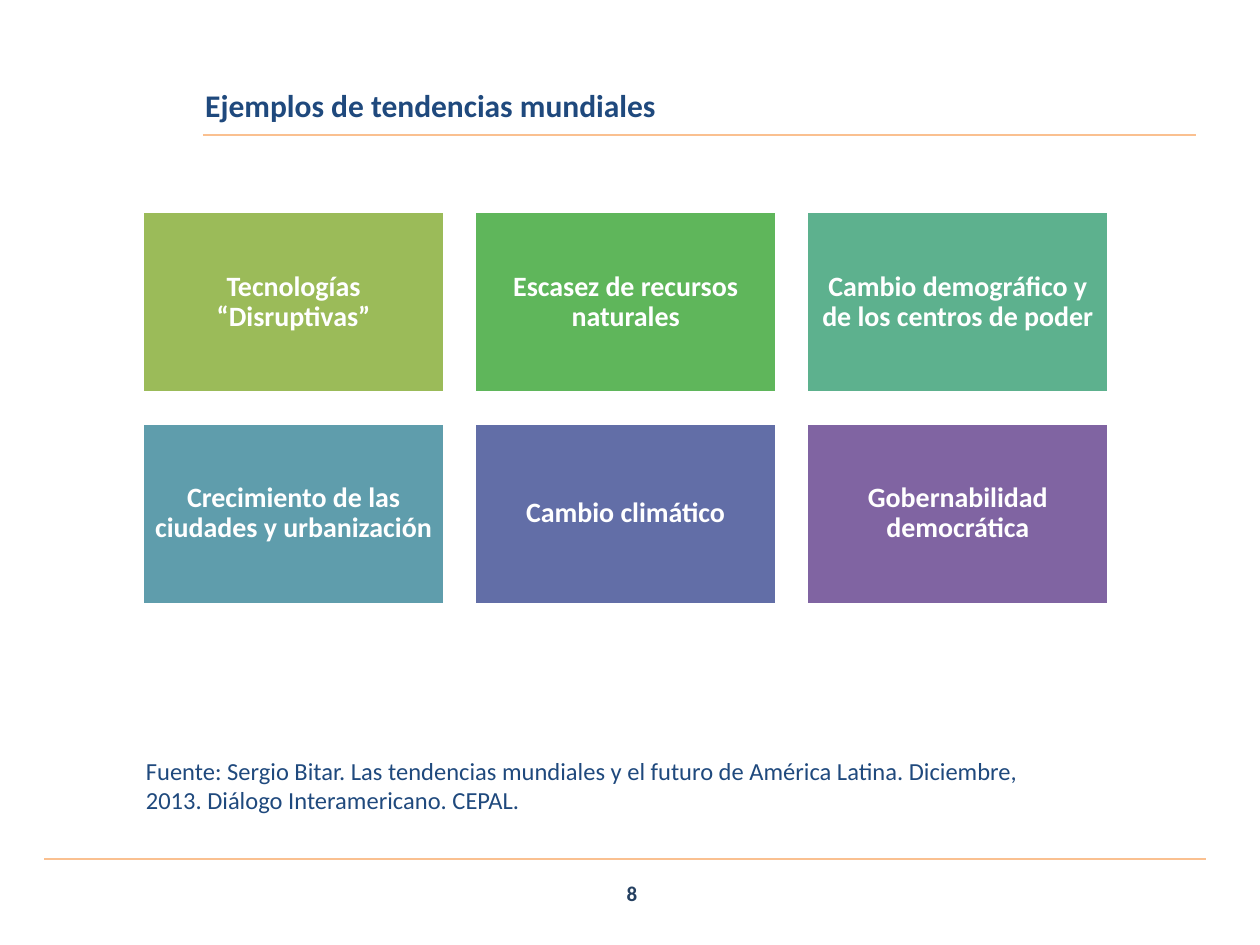
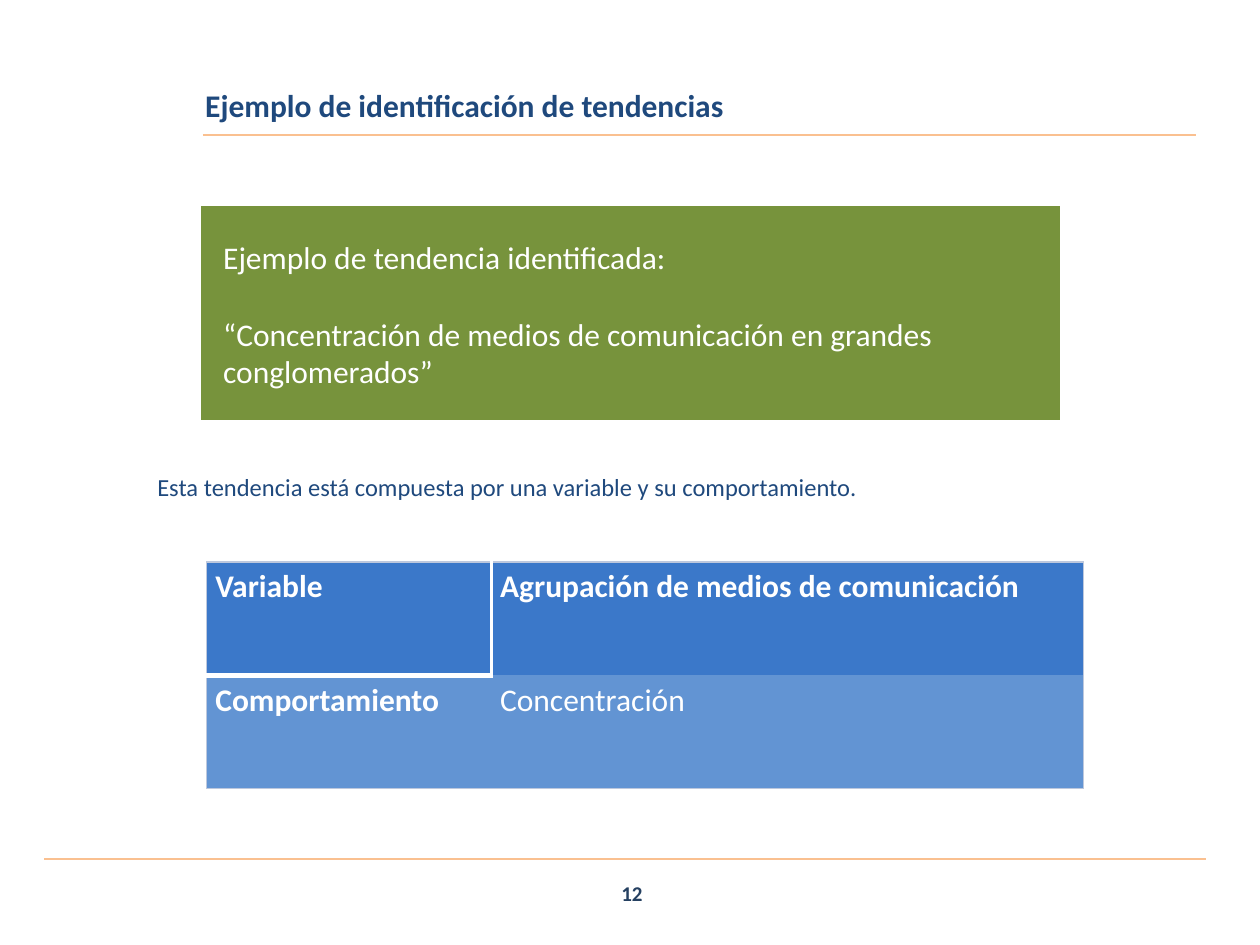
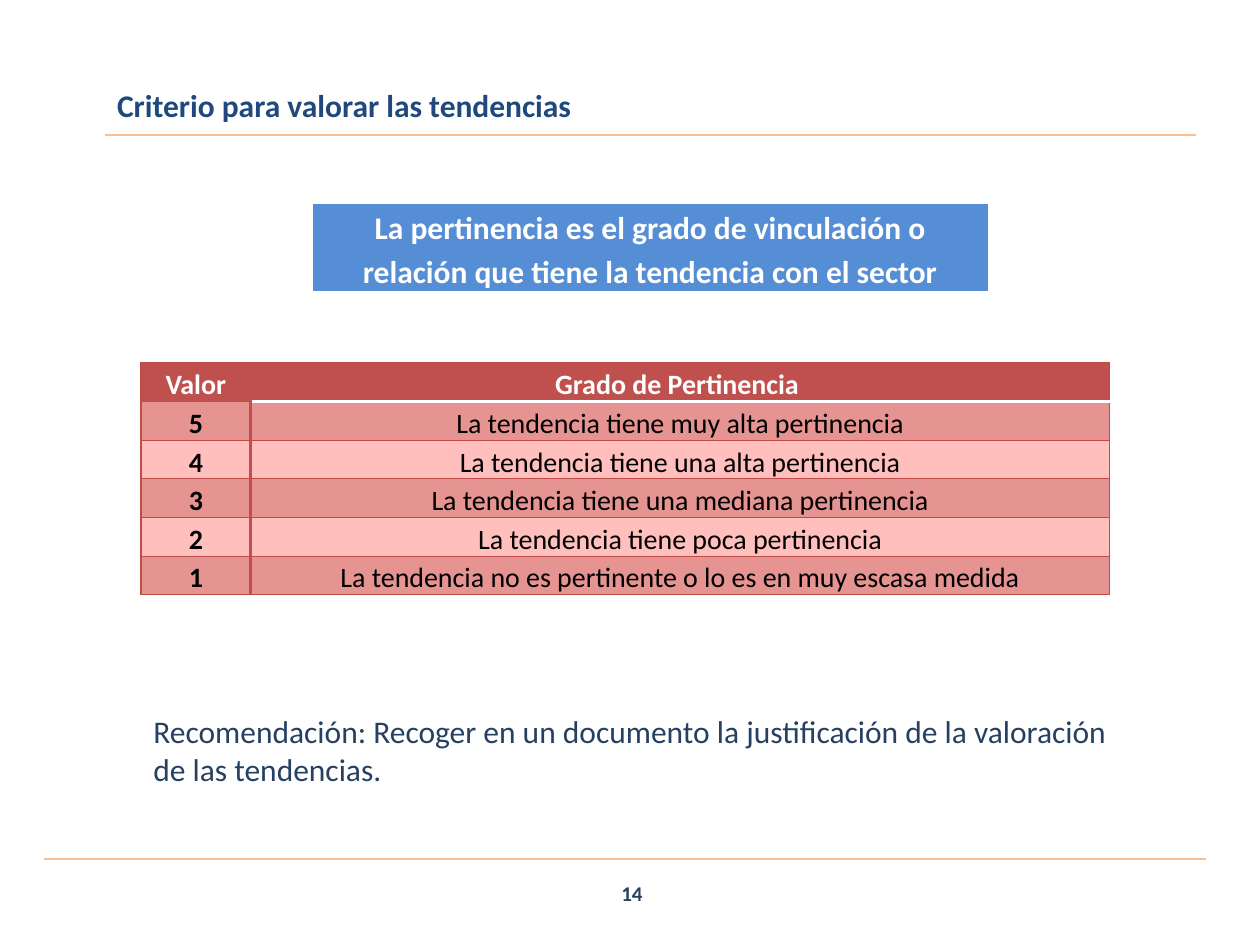
from itertools import product
from lxml.etree import SubElement
from pptx import Presentation
from pptx.dml.color import RGBColor
from pptx.enum.shapes import MSO_CONNECTOR, MSO_SHAPE
from pptx.enum.text import MSO_ANCHOR, PP_ALIGN
from pptx.oxml.ns import qn
from pptx.util import Pt

FONT = "Calibri"
NAVY = RGBColor(0x1F, 0x49, 0x7D)
DARK = RGBColor(0x25, 0x40, 0x61)
PEACH = RGBColor(0xFA, 0xC0, 0x90)
WHITE = RGBColor(0xFF, 0xFF, 0xFF)
BLACK = RGBColor(0, 0, 0)
OLIVE = RGBColor(0x77, 0x93, 0x3C)
BLUE = RGBColor(0x3B, 0x78, 0xC9)
SOFT = RGBColor(0x62, 0x94, 0xD3)
SKY = RGBColor(0x55, 0x8E, 0xD5)
PALE = RGBColor(0xBD, 0xC8, 0xDD)
RED = RGBColor(0xC0, 0x50, 0x4D)
BRICK = RGBColor(0xBF, 0x4C, 0x48)
ROSE = RGBColor(0xE5, 0x94, 0x91)
PINK = RGBColor(0xFF, 0xBF, 0xBD)
PLAIN = "{2D5ABB26-0587-4C30-8999-92F81FD0307C}"

TRENDS = [
    ("Tecnologías “Disruptivas”", RGBColor(0x9B, 0xBB, 0x59)),
    ("Escasez de recursos naturales", RGBColor(0x5F, 0xB6, 0x5B)),
    ("Cambio demográfico y de los centros de poder", RGBColor(0x5D, 0xB1, 0x8E)),
    ("Crecimiento de las ciudades y urbanización", RGBColor(0x5F, 0x9D, 0xAC)),
    ("Cambio climático", RGBColor(0x62, 0x6E, 0xA7)),
    ("Gobernabilidad democrática", RGBColor(0x80, 0x64, 0xA2)),
]
SOURCE = ("Fuente: Sergio Bitar. Las tendencias mundiales y el futuro de América Latina. "
          "Diciembre, 2013. Diálogo Interamericano. CEPAL.")
SAMPLE = ["Ejemplo de tendencia identificada:",
          "“Concentración de medios de comunicación en grandes conglomerados”"]
PARTS = "Esta tendencia está compuesta por una variable y su comportamiento."
PAIRS = [("Variable", "Agrupación de medios de comunicación"),
         ("Comportamiento", "Concentración")]
CLAIM = "La pertinencia es el grado de vinculación o relación que tiene la tendencia con el sector"
GRADES = [
    ("Valor", "Grado de Pertinencia "),
    ("5", "La tendencia tiene muy alta pertinencia"),
    ("4", "La tendencia tiene una alta pertinencia"),
    ("3", "La tendencia tiene una mediana pertinencia"),
    ("2", "La tendencia tiene poca pertinencia"),
    ("1", "La tendencia no es pertinente o lo es en muy escasa medida"),
]
ADVICE = ("Recomendación: Recoger en un documento la justificación de la valoración "
          "de las tendencias.")

TITLE_BOX = (110.2, 43.2, 584, 33.8)
WIDE_BOX = (59.8, 49, 476, 21.6)


def write(frame, lines, size, color, bold=False, align=PP_ALIGN.LEFT,
          space=None, before=0, after=0, gap=0):
    for i, line in enumerate(lines):
        para = frame.add_paragraph() if i else frame.paragraphs[0]
        para.alignment = align
        para.space_before = Pt(gap if i else before)
        para.space_after = Pt(after)
        if space:
            para.line_spacing = space
        run = para.add_run()
        run.text = line
        font = run.font
        font.name, font.size, font.bold = FONT, Pt(size), bold
        font.color.rgb = color


def inset(part, left, top, right, low):
    part.margin_left, part.margin_top = Pt(left), Pt(top)
    part.margin_right, part.margin_bottom = Pt(right), Pt(low)


def note(slide, box, text, size, color, anchor=MSO_ANCHOR.TOP, **style):
    frame = slide.shapes.add_textbox(*map(Pt, box)).text_frame
    frame.word_wrap = True
    frame.vertical_anchor = anchor
    write(frame, [text], size, color, **style)


def rule(slide, left, right, y):
    line = slide.shapes.add_connector(
        MSO_CONNECTOR.STRAIGHT, Pt(left), Pt(y), Pt(right), Pt(y))
    line.line.color.rgb = PEACH
    line.line.width = Pt(1.25)
    SubElement(line._element.spPr, qn("a:effectLst"))


def block(slide, box, fill):
    shape = slide.shapes.add_shape(MSO_SHAPE.RECTANGLE, *map(Pt, box))
    shape.shadow.inherit = False
    shape.fill.solid()
    shape.fill.fore_color.rgb = fill
    shape.line.color.rgb = WHITE
    shape.line.width = Pt(2)
    frame = shape.text_frame
    frame.word_wrap = True
    frame.vertical_anchor = MSO_ANCHOR.MIDDLE
    return frame


def start(deck, title, number, box, left):
    slide = deck.slides.add_slide(deck.slide_layouts[6])
    rule(slide, 25.2, 689, 491)
    rule(slide, left, 683.3, 77)
    note(slide, box, title, 18, NAVY, MSO_ANCHOR.MIDDLE, bold=True, before=3.6)
    note(slide, (277.2, 496, 167.8, 28.8), number, 12, DARK, MSO_ANCHOR.MIDDLE,
         bold=True, align=PP_ALIGN.CENTER)
    return slide


def grid(slide, left, top, widths, height, rows, pad, anchor, look):
    count = len(rows)
    table = slide.shapes.add_table(
        count, len(widths), Pt(left), Pt(top), Pt(sum(widths)), Pt(height * count)).table
    table.first_row = table.horz_banding = False
    table._tbl.tblPr.find(qn("a:tableStyleId")).text = PLAIN
    for col, width in zip(table.columns, widths):
        col.width = Pt(width)
    for r, row in enumerate(rows):
        table.rows[r].height = Pt(height)
        for c, text in enumerate(row):
            cell = table.cell(r, c)
            fill, style = look(r, c)
            cell.fill.solid()
            cell.fill.fore_color.rgb = fill
            cell.vertical_anchor = anchor
            inset(cell, pad, 0, pad, 0)
            write(cell.text_frame, [text], space=1.15, **style)
    return table


def edge(table, outer, inner):
    high, wide = len(table.rows), len(table.columns)
    pens = dict(inner)
    for (r, c, side), pen in inner.items():
        pens[(r, c + 1, "L") if side == "R" else (r + 1, c, "T")] = pen
    for r in range(high):
        pens[r, 0, "L"] = pens[r, wide - 1, "R"] = outer
    for c in range(wide):
        pens[0, c, "T"] = pens[high - 1, c, "B"] = outer
    for r, c in product(range(high), range(wide)):
        props = table.cell(r, c)._tc.get_or_add_tcPr()
        sides = [side for side in "LRTB" if (r, c, side) in pens]
        for i, side in enumerate(sides):
            color, width = pens[r, c, side]
            line = SubElement(props, qn("a:ln" + side), w=str(Pt(width)))
            fill = SubElement(line, qn("a:solidFill"))
            SubElement(fill, qn("a:srgbClr"), val=str(color))
            props.insert(i, line)


def world(deck):
    slide = start(deck, "Ejemplos de tendencias mundiales", "8", TITLE_BOX, 115.9)
    wide, high, gap = 172.8, 103.7, 17
    for i, (text, fill) in enumerate(TRENDS):
        row, col = divmod(i, 3)
        box = (81.4 + col * (wide + gap), 121 + row * (high + gap), wide, high)
        frame = block(slide, box, fill)
        inset(frame, 5, 5, 5, 5)
        write(frame, [text], 16, WHITE, True, PP_ALIGN.CENTER, 0.9)
    note(slide, (76.3, 428.4, 521.3, 41), SOURCE, 14, NAVY)


def sample(deck):
    slide = start(deck, "Ejemplo de identificación de tendencias", "12", TITLE_BOX, 115.9)
    frame = block(slide, (113.8, 116.6, 493.2, 124.6), OLIVE)
    inset(frame, 13.7, 5, 3.6, 3.6)
    write(frame, SAMPLE, 18, WHITE, gap=22)
    note(slide, (82.8, 266.4, 521.3, 24.5), PARTS, 14, NAVY)

    def look(r, c):
        return (SOFT if r else BLUE), dict(
            size=18, color=WHITE, bold=not (r and c), align=PP_ALIGN.JUSTIFY)

    table = grid(slide, 118.1, 321.1, (162.7, 338.4), 64.8, PAIRS, 5,
                 MSO_ANCHOR.TOP, look)
    edge(table, (PALE, 0.75), {(0, 0, "R"): (WHITE, 2), (0, 0, "B"): (WHITE, 3)})


def value(deck):
    slide = start(deck, "Criterio para valorar las tendencias", "14", WIDE_BOX, 59.8)

    def look(r, c):
        fill = (ROSE if r % 2 else PINK) if r else RED
        return fill, dict(size=16, color=BLACK if r else WHITE,
                          bold=not (r and c), align=PP_ALIGN.CENTER)

    def banner(r, c):
        return SKY, dict(size=18, color=WHITE, bold=True, align=PP_ALIGN.CENTER)

    table = grid(slide, 80.6, 207.4, (62.6, 491), 22.1, GRADES, 3.6,
                 MSO_ANCHOR.MIDDLE, look)
    last = len(GRADES) - 1
    thin = (BRICK, 0.75)
    inner = {(r, c, "B"): thin for r in range(1, last) for c in range(2)}
    inner.update({(r, 0, "R"): (RED, 2) for r in range(1, last + 1)})
    inner[0, 1, "B"] = (WHITE, 2)
    edge(table, thin, inner)
    grid(slide, 178.6, 116.6, (386,), 49.7, [(CLAIM,)], 3.6, MSO_ANCHOR.MIDDLE, banner)
    note(slide, (80.6, 403.2, 572.4, 51), ADVICE, 18, DARK)


def main():
    deck = Presentation()
    deck.slide_width, deck.slide_height = Pt(720), Pt(540)
    for build in (world, sample, value):
        build(deck)
    deck.save("out.pptx")


if __name__ == "__main__":
    main()
